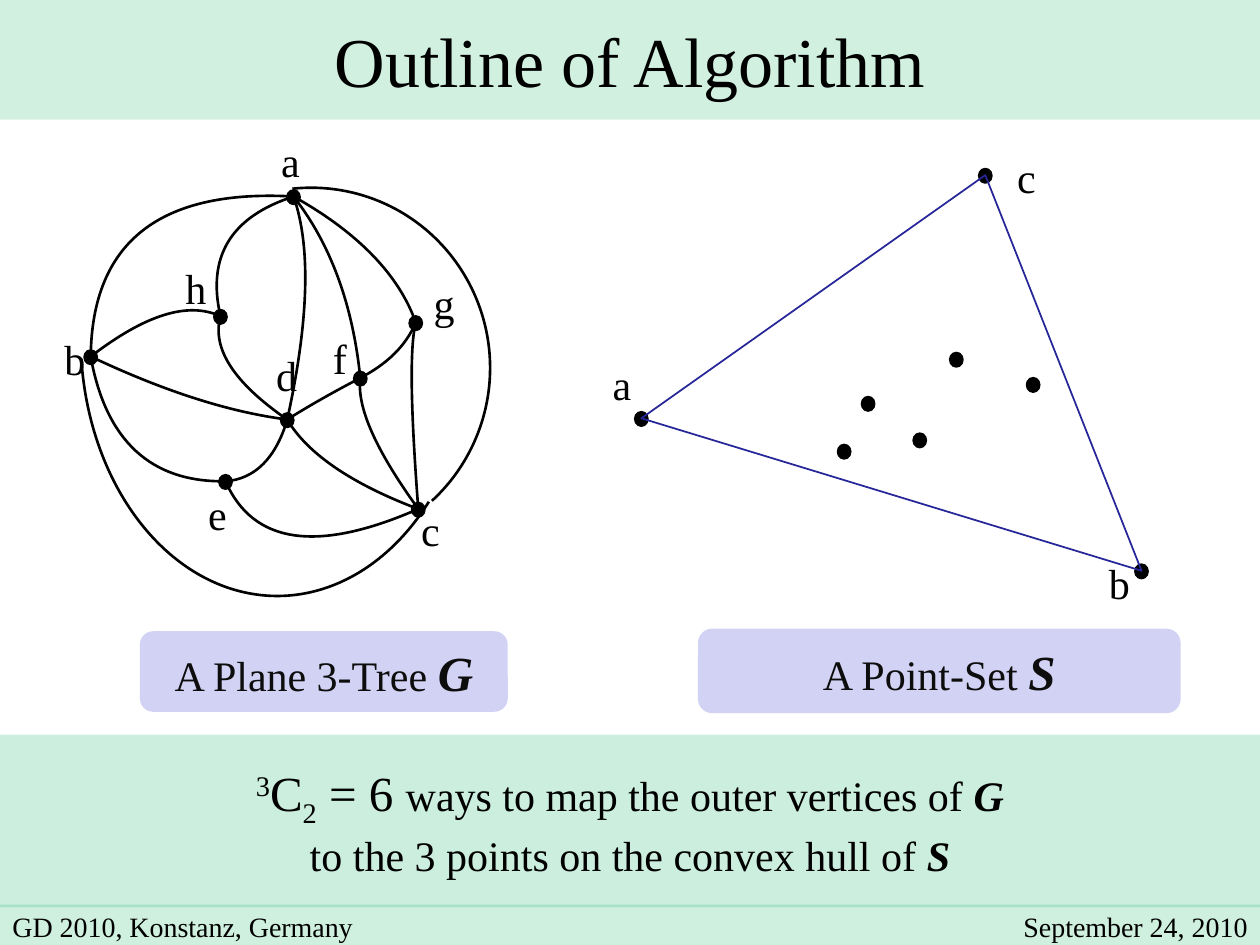
"""Build the slide that outlines the algorithm for mapping a plane 3-tree to a point-set."""
from lxml import etree
from pptx import Presentation
from pptx.dml.color import RGBColor
from pptx.enum.shapes import MSO_SHAPE
from pptx.enum.text import MSO_ANCHOR, MSO_AUTO_SIZE, PP_ALIGN
from pptx.oxml.ns import qn
from pptx.util import Pt

PX = 9144
LEFT, CENTER, RIGHT = PP_ALIGN.LEFT, PP_ALIGN.CENTER, PP_ALIGN.RIGHT
MIDDLE = MSO_ANCHOR.MIDDLE
RECT, ROUNDED = MSO_SHAPE.RECTANGLE, MSO_SHAPE.ROUNDED_RECTANGLE
OVAL, ARC = MSO_SHAPE.OVAL, MSO_SHAPE.ARC
COLORS = {
    "black": "000000", "green": "00B050", "mint": "CCEEDF",
    "lavender": "D2D2F4", "caption": "0D0D0D", "hull": "262699",
}


def paint(shape, fill=None, alpha=None, line=None, width=1.5):
    shape.shadow.inherit = False
    if fill:
        shape.fill.solid()
        shape.fill.fore_color.rgb = RGBColor.from_string(COLORS[fill])
        if alpha:
            color = shape._element.spPr.find(qn("a:solidFill"))[0]
            etree.SubElement(color, qn("a:alpha")).set("val", str(alpha * 1000))
    else:
        shape.fill.background()
    if line:
        shape.line.color.rgb = RGBColor.from_string(COLORS[line])
        shape.line.width = Pt(width)
    else:
        shape.line.fill.background()


def write(paragraph, text, size=24, color="black", strong=False, baseline=0, align=CENTER):
    paragraph.alignment = align
    run = paragraph.add_run()
    run.text = text
    run.font.name = "Times New Roman"
    run.font.size = Pt(size)
    run.font.color.rgb = RGBColor.from_string(COLORS[color])
    run.font.bold = run.font.italic = strong
    if baseline:
        run.font._element.set("baseline", str(baseline * 1000))


prs = Presentation()
prs.slide_width, prs.slide_height = 1000 * PX, 750 * PX
slide = prs.slides.add_slide(prs.slide_layouts[5])
shapes = slide.shapes

title = shapes.title
title.left, title.top, title.width, title.height = 0, 0, 1000 * PX, 95 * PX
title.text_frame.auto_size = MSO_AUTO_SIZE.NONE
title.text_frame.word_wrap = False
title.text_frame.vertical_anchor = MIDDLE
write(title.text_frame.paragraphs[0], "Outline of Algorithm", size=40)
paint(title, fill="green", alpha=18)

graph_vertices = {
    "a": (233, 156), "b": (72, 283), "c": (332, 404), "d": (228, 333),
    "e": (179, 382), "f": (286, 300), "g": (330, 256), "h": (175, 251),
}
hull_points = {"a": (509, 332), "b": (906, 453), "c": (782, 139)}
inner_points = [(689, 320), (820, 305), (670, 358), (759, 285), (730, 349)]

edge_midpoints = {
    "ba": (113, 183), "bd": (154, 316), "be": (108, 358), "bh": (130, 250),
    "ad": (242, 230), "af": (268, 220), "ag": (296, 203), "ah": (181, 192),
    "dc": (266, 371), "de": (209, 368), "df": (257, 316), "dh": (183, 291),
    "ec": (234, 425), "fc": (295, 343), "fg": (313, 281), "gc": (327, 308),
}
for (source, target), middle in edge_midpoints.items():
    start, end = graph_vertices[source], graph_vertices[target]
    control_start = [(4 * m - p) / 3 for m, p in zip(middle, end)]
    control_end = [(4 * m - p) / 3 for m, p in zip(middle, start)]
    builder = shapes.build_freeform(*start, scale=PX)
    builder.add_line_segments([control_start, control_end, end], close=False)
    edge = builder.convert_to_shape()
    paint(edge, line="black")
    segments = list(edge._element.iter(qn("a:lnTo")))
    curve = etree.SubElement(segments[0].getparent(), qn("a:cubicBezTo"))
    for segment in segments:
        curve.append(segment[0])
        segment.getparent().remove(segment)

outer_arcs = [
    (105, 149, 284, 286, 158.4, 28.65),
    (64, 62, 312, 411, 28.42, 104.21),
]
for x, y, w, h, start, end in outer_arcs:
    outer_edge = shapes.add_shape(ARC, x * PX, y * PX, w * PX, h * PX)
    outer_edge.adjustments[0], outer_edge.adjustments[1] = start, end
    paint(outer_edge, line="black")

for x, y in [*graph_vertices.values(), *hull_points.values(), *inner_points]:
    dot = shapes.add_shape(OVAL, (x - 5) * PX, (y - 5) * PX, 10 * PX, 11 * PX)
    paint(dot, fill="black", line="black", width=1.25)

corners = list(hull_points.values())
builder = shapes.build_freeform(*corners[0], scale=PX)
builder.add_line_segments(corners[1:], close=True)
paint(builder.convert_to_shape(), line="hull", width=1)

vertex_labels = [
    ("a", 214, 118), ("b", 42, 275), ("c", 325, 411), ("d", 210, 288),
    ("e", 156, 398), ("f", 255, 274), ("g", 335, 231), ("h", 138, 219),
    ("a", 477, 295), ("b", 871, 453), ("c", 798, 131),
]
for letter, x, y in vertex_labels:
    frame = shapes.add_textbox(x * PX, y * PX, 19 * PX, 19 * PX).text_frame
    frame.word_wrap = True
    frame.vertical_anchor = MIDDLE
    write(frame.paragraphs[0], letter)

captions = [
    ("A Plane 3-Tree ", "G", 111, 501, 292, 64),
    ("A Point-Set ", "S", 554, 499, 383, 67),
]
for words, symbol, x, y, w, h in captions:
    caption = shapes.add_shape(ROUNDED, x * PX, y * PX, w * PX, h * PX)
    paint(caption, fill="lavender")
    caption.text_frame.vertical_anchor = MIDDLE
    paragraph = caption.text_frame.paragraphs[0]
    write(paragraph, words, color="caption")
    write(paragraph, symbol, size=28, color="caption", strong=True)

mapping = shapes.add_shape(RECT, 0, 583 * PX, 1000 * PX, 137 * PX)
paint(mapping, fill="mint")
mapping.text_frame.word_wrap = False
mapping.text_frame.vertical_anchor = MIDDLE
count = mapping.text_frame.paragraphs[0]
write(count, "3", size=28, baseline=30)
write(count, "C", size=28)
write(count, "2", size=28, baseline=-25)
write(count, " = 6 ", size=28)
write(count, "ways to map the outer vertices of ")
write(count, "G", strong=True)
hull_line = mapping.text_frame.add_paragraph()
write(hull_line, "to the 3 points on the convex hull of ")
write(hull_line, "S", strong=True)

footer = shapes.add_shape(RECT, 0, 718 * PX, 1000 * PX, 32 * PX)
paint(footer, fill="green", alpha=19)
footer_texts = [
    ("GD 2010, Konstanz, Germany", 0, 311, LEFT),
    ("September 24, 2010", 777, 223, RIGHT),
]
for words, x, w, align in footer_texts:
    frame = shapes.add_textbox(x * PX, 710 * PX, w * PX, 51 * PX).text_frame
    frame.word_wrap = True
    frame.vertical_anchor = MIDDLE
    write(frame.paragraphs[0], words, size=16, align=align)

prs.save("out.pptx")
